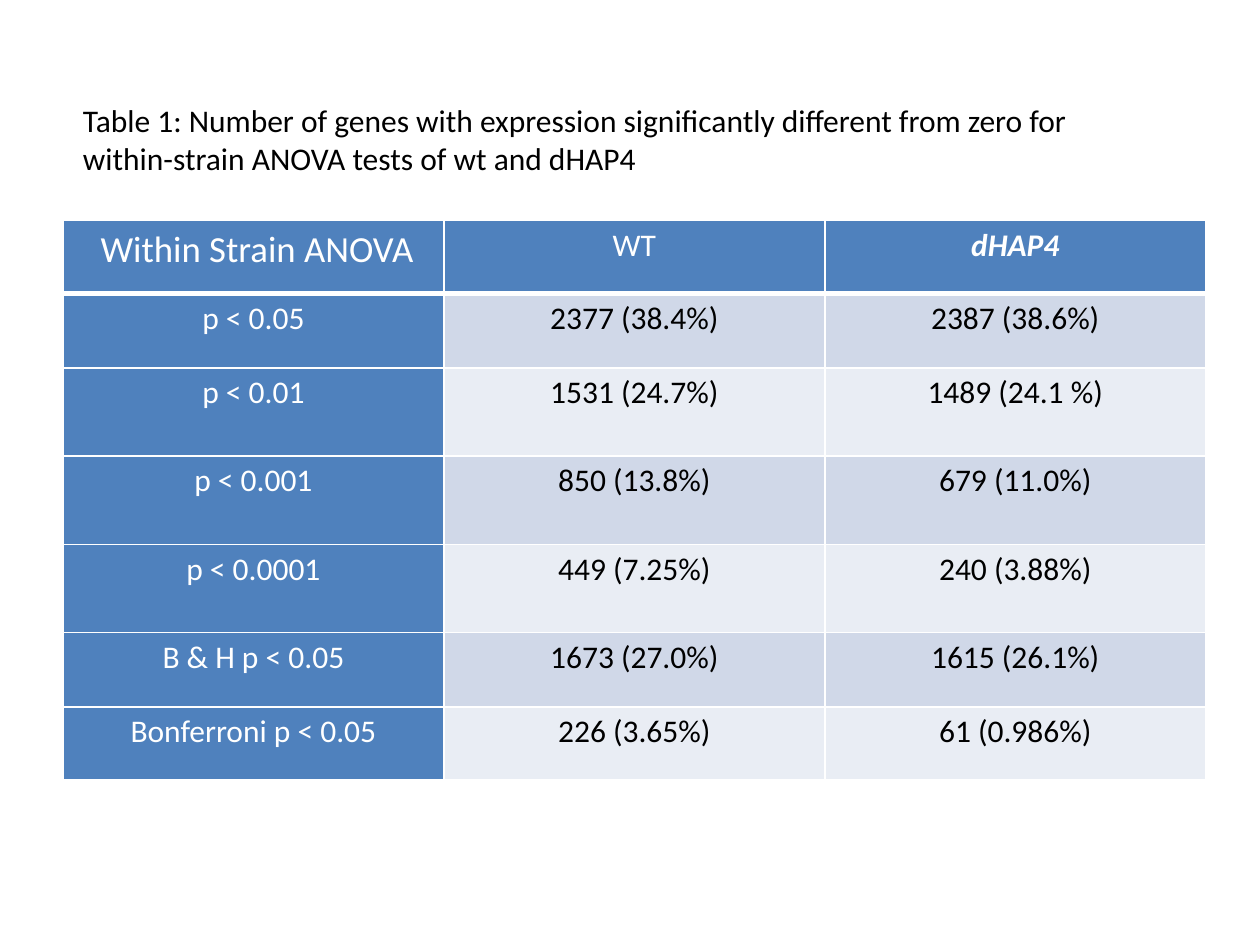
"""Build a slide with a table of ANOVA test results for two strains."""
from dataclasses import dataclass

from lxml import etree
from pptx import Presentation
from pptx.dml.color import RGBColor
from pptx.enum.text import MSO_AUTO_SIZE, PP_ALIGN
from pptx.oxml.ns import qn
from pptx.util import Inches, Pt

LEFT, CENTER = PP_ALIGN.LEFT, PP_ALIGN.CENTER
GROW = MSO_AUTO_SIZE.SHAPE_TO_FIT_TEXT


@dataclass(frozen=True)
class Theme:
    font: str = "Calibri"
    body: int = 18
    lead: int = 21
    ink: str = "000000"
    white: str = "FFFFFF"
    blue: str = "4F81BD"
    bands: tuple = ("D0D8E8", "E9EDF4")
    thin: int = 1
    thick: int = 3


THEME = Theme()
TITLE = ("Table 1: Number of genes with expression significantly different "
         "from zero for within-strain ANOVA tests of wt and dHAP4")
HEAD = ("Within Strain ANOVA", "WT", "dHAP4")
ROWS = (
    ("p < 0.05", "2377 (38.4%)", "2387 (38.6%)"),
    ("p < 0.01", "1531 (24.7%)", "1489 (24.1 %)"),
    ("p < 0.001", "850 (13.8%)", "679 (11.0%)"),
    ("p < 0.0001", "449 (7.25%)", "240 (3.88%)"),
    ("B & H p < 0.05", "1673 (27.0%)", "1615 (26.1%)"),
    ("Bonferroni p < 0.05", "226 (3.65%)", "61 (0.986%)"),
)
HEIGHTS = (0.58, 0.59, 0.7, 0.7, 0.7, 0.59, 0.58)


def write(para, text, size=THEME.body, color=THEME.ink, bold=False,
          italic=False, align=LEFT, space=1.0):
    """Add one formatted run to a paragraph."""
    para.alignment, para.line_spacing = align, space
    run = para.add_run()
    run.text = text
    font = run.font
    font.name, font.size = THEME.font, Pt(size)
    font.bold, font.italic = bold, italic
    font.color.rgb = RGBColor.from_string(color)


class Deck:
    """Hold the theme and the current slide."""

    def __init__(self, theme):
        """Start a deck with one blank slide."""
        self.theme = theme
        self.show = Presentation()
        self.show.slide_width, self.show.slide_height = Inches(10), Inches(7.5)
        self.slide = self.show.slides.add_slide(self.show.slide_layouts[6])

    def label(self, text, left, top, width, height):
        """Add a wrapped text box that grows with its text."""
        box = self.slide.shapes.add_textbox(
            Inches(left), Inches(top), Inches(width), Inches(height))
        frame = box.text_frame
        frame.word_wrap, frame.auto_size = True, GROW
        write(frame.paragraphs[0], text)

    def border(self, cell, head):
        """Rule all four sides of a cell."""
        props = cell._tc.get_or_add_tcPr()
        for side in "LRTB":
            width = self.theme.thick if head and side == "B" else self.theme.thin
            line = etree.SubElement(props, qn(f"a:ln{side}"), w=str(Pt(width)))
            fill = etree.SubElement(line, qn("a:solidFill"))
            etree.SubElement(fill, qn("a:srgbClr"), val=self.theme.white)

    def cell(self, cell, text, row, col):
        """Style and fill one table cell by its place."""
        theme, head = self.theme, row == 0
        dark = head or col == 0
        cell.margin_left = cell.margin_right = Inches(0.07)
        cell.margin_top = cell.margin_bottom = 0
        self.border(cell, head)
        cell.fill.solid()
        cell.fill.fore_color.rgb = RGBColor.from_string(
            theme.blue if dark else theme.bands[(row - 1) % 2])
        para = cell.text_frame.paragraphs[0]
        lead, strain = head and col == 0, head and col == 2
        if lead:
            write(para, "\u00a0", align=CENTER, space=1.15)
        write(para, text, size=theme.lead if lead else theme.body,
              color=theme.white if dark else theme.ink,
              bold=strain, italic=strain, align=CENTER, space=1.15)

    def table(self, rows, left, top, width, heights):
        """Add a table with equal columns and given row heights."""
        frame = self.slide.shapes.add_table(
            len(rows), len(rows[0]), Inches(left), Inches(top),
            Inches(width), Inches(sum(heights)))
        grid = frame.table
        grid.first_row = grid.horz_banding = False
        for row, (texts, height) in enumerate(zip(rows, heights)):
            grid.rows[row].height = Inches(height)
            for col, text in enumerate(texts):
                self.cell(grid.cell(row, col), text, row, col)


def main():
    """Build and save the slide."""
    deck = Deck(THEME)
    deck.table((HEAD, *ROWS), 0.5, 1.75, 9.07, HEIGHTS)
    deck.label(TITLE, 0.56, 0.75, 8.75, 0.71)
    deck.show.save("out.pptx")


if __name__ == "__main__":
    main()
